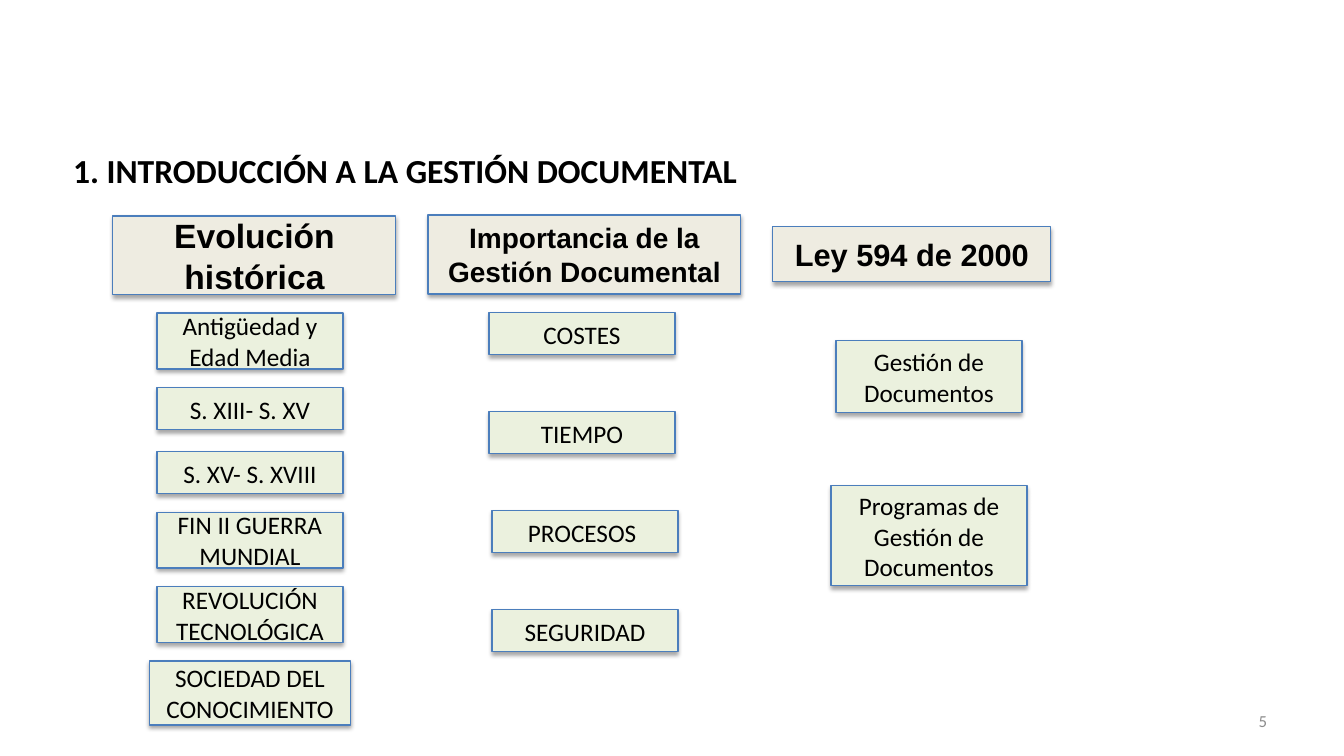
from dataclasses import dataclass

from lxml import etree
from pptx import Presentation
from pptx.dml.color import RGBColor
from pptx.enum.shapes import MSO_SHAPE
from pptx.enum.text import MSO_ANCHOR, MSO_AUTO_SIZE, PP_ALIGN
from pptx.oxml.ns import qn
from pptx.util import Emu, Pt

RECTANGLE = MSO_SHAPE.RECTANGLE
PROCESS = MSO_SHAPE.FLOWCHART_PROCESS
TOP, MIDDLE = MSO_ANCHOR.TOP, MSO_ANCHOR.MIDDLE
LEFT, CENTER, RIGHT = PP_ALIGN.LEFT, PP_ALIGN.CENTER, PP_ALIGN.RIGHT
NO_AUTOFIT = MSO_AUTO_SIZE.NONE

EMU_PER_PX = 914400 / 100.8
TITLE_ONLY = 5


@dataclass(frozen=True)
class Theme:
    ink: str = "000000"
    muted: str = "8C8C8C"
    heading_fill: str = "EEECE1"
    topic_fill: str = "EBF1DE"
    outline: str = "4B7EBC"
    heading_font: str = "Arial"
    body_font: str = "Calibri"
    title_size: int = 24
    topic_size: int = 18
    number_size: int = 12
    line_width: float = 0.75


def px(length):
    return Emu(round(length * EMU_PER_PX))


class SlideBuilder:
    def __init__(self, page, theme):
        self.page = page
        self.theme = theme

    def set_text(self, box, text, font, size, color, align, anchor, bold=False):
        frame = box.text_frame
        frame.word_wrap = True
        frame.auto_size = NO_AUTOFIT
        frame.vertical_anchor = anchor
        para = frame.paragraphs[0]
        para.text = text
        para.alignment = align
        para.font.name = font
        para.font.size = Pt(size)
        para.font.bold = bold
        para.font.color.rgb = RGBColor.from_string(color)

    def title(self, text, left, top, width, height):
        box = self.page.shapes.title
        box.left, box.top = px(left), px(top)
        box.width, box.height = px(width), px(height)
        theme = self.theme
        self.set_text(box, text, theme.body_font, theme.title_size, theme.ink, LEFT, TOP, True)

    def page_number(self, text, left, top, width, height):
        box = self.page.shapes.add_textbox(px(left), px(top), px(width), px(height))
        theme = self.theme
        self.set_text(box, text, theme.body_font, theme.number_size, theme.muted, RIGHT, MIDDLE)

    def card(self, kind, fill, left, top, width, height):
        box = self.page.shapes.add_shape(kind, px(left), px(top), px(width), px(height))
        box.fill.solid()
        box.fill.fore_color.rgb = RGBColor.from_string(fill)
        box.line.color.rgb = RGBColor.from_string(self.theme.outline)
        box.line.width = Pt(self.theme.line_width)
        self.soft_shadow(box)
        return box

    def soft_shadow(self, box):
        box.shadow.inherit = False
        effects = box._element.spPr.find(qn("a:effectLst"))
        shadow = etree.SubElement(
            effects, qn("a:outerShdw"), blurRad=str(Pt(3.1)), dist=str(Pt(1.8)),
            dir="5400000", rotWithShape="0")
        color = etree.SubElement(shadow, qn("a:srgbClr"), val=self.theme.ink)
        etree.SubElement(color, qn("a:alpha"), val="35000")

    def heading(self, text, size, left, top, width, height):
        theme = self.theme
        box = self.card(RECTANGLE, theme.heading_fill, left, top, width, height)
        self.set_text(box, text, theme.heading_font, size, theme.ink, CENTER, MIDDLE, True)

    def topic(self, text, middle, top, height, width=186):
        theme = self.theme
        box = self.card(PROCESS, theme.topic_fill, middle - width / 2, top, width, height)
        self.set_text(box, text, theme.body_font, theme.topic_size, theme.ink, CENTER, MIDDLE)


HEADINGS = [
    ("Evolución histórica", 24, 113, 216, 283, 79),
    ("Importancia de la Gestión Documental", 20, 428, 215, 313, 79),
    ("Ley 594 de 2000", 22, 773, 227, 278, 55),
]
HISTORY = [
    ("Antigüedad y Edad Media", 313, 56),
    ("S. XIII- S. XV", 388, 42),
    ("S. XV- S. XVIII", 452, 42),
    ("FIN II GUERRA MUNDIAL", 512, 56),
    ("REVOLUCIÓN TECNOLÓGICA", 587, 56),
    ("SOCIEDAD DEL CONOCIMIENTO", 661, 64, 201),
]
BENEFITS = [("COSTES", 582), ("TIEMPO", 582), ("PROCESOS ", 585), ("SEGURIDAD", 585)]
LAW = [
    ("Gestión de Documentos", 341, 72),
    ("Programas de Gestión de Documentos", 486, 100, 196),
]
HISTORY_MIDDLE, LAW_MIDDLE = 250, 929
BENEFIT_TOP, BENEFIT_STEP, BENEFIT_HEIGHT = 313, 99, 42


def main():
    deck = Presentation()
    deck.slide_width, deck.slide_height = px(1344), px(756)
    page = deck.slides.add_slide(deck.slide_layouts[TITLE_ONLY])
    builder = SlideBuilder(page, Theme())

    builder.page_number("5", 964, 701, 313, 40)
    builder.title("1. INTRODUCCIÓN A LA GESTIÓN DOCUMENTAL", 63, 145, 734, 50)
    for heading in HEADINGS:
        builder.heading(*heading)
    for text, *place in HISTORY:
        builder.topic(text, HISTORY_MIDDLE, *place)
    for row, (text, middle) in enumerate(BENEFITS):
        builder.topic(text, middle, BENEFIT_TOP + row * BENEFIT_STEP, BENEFIT_HEIGHT)
    for text, *place in LAW:
        builder.topic(text, LAW_MIDDLE, *place)

    deck.save("out.pptx")


if __name__ == "__main__":
    main()
